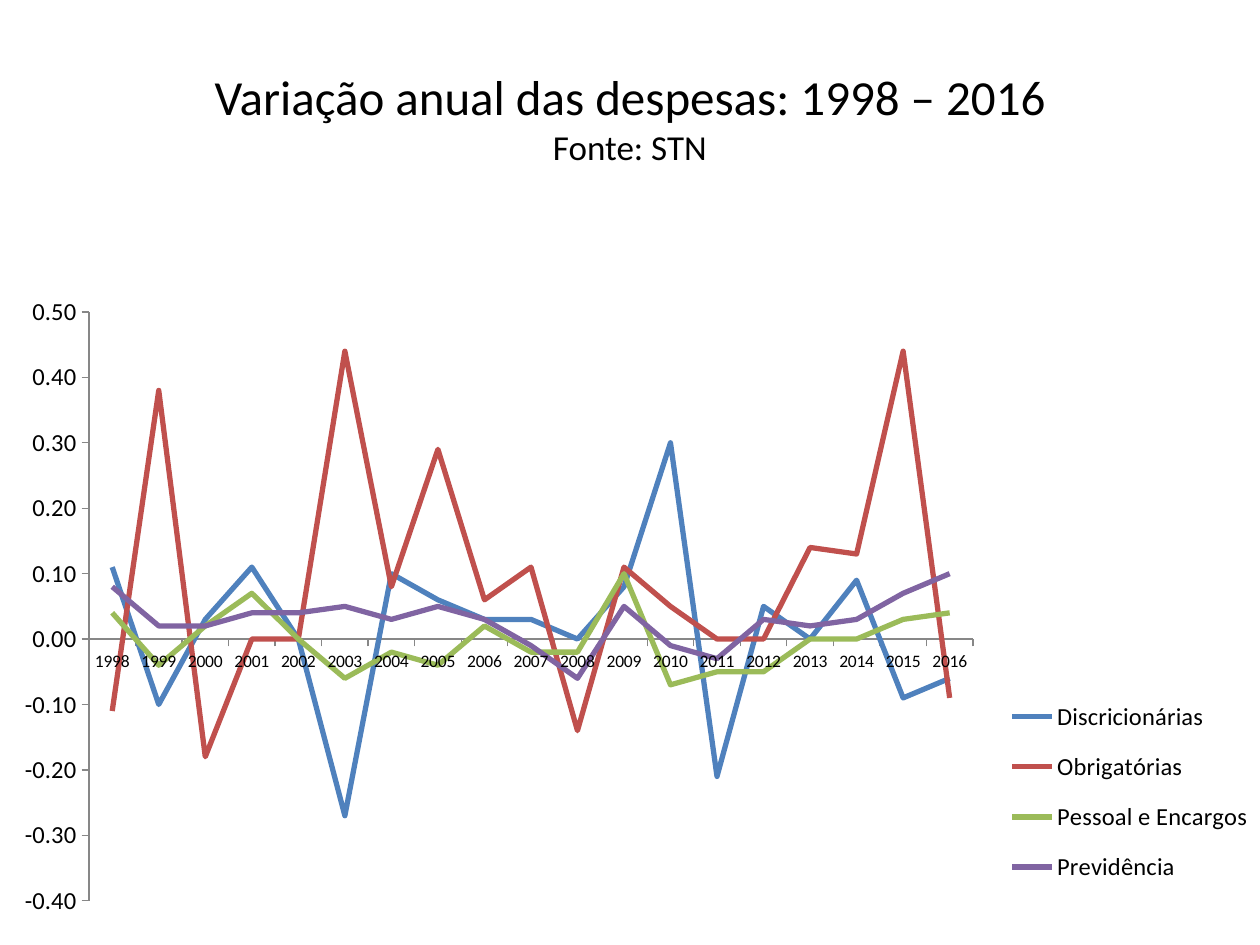
from lxml import etree
from pptx import Presentation
from pptx.chart.data import CategoryChartData
from pptx.dml.color import RGBColor
from pptx.enum.chart import XL_CHART_TYPE as ChartType
from pptx.enum.chart import XL_LEGEND_POSITION as LegendPosition
from pptx.enum.chart import XL_MARKER_STYLE as Marker
from pptx.enum.chart import XL_TICK_MARK as Tick
from pptx.enum.text import MSO_ANCHOR as Anchor
from pptx.enum.text import PP_ALIGN as Align
from pptx.oxml.ns import qn
from pptx.util import Emu, Pt

COLORS = {
    "text": "000000",
    "axis": "878787",
    "Discricionárias": "4F81BD",
    "Obrigatórias": "C0504D",
    "Pessoal e Encargos": "9BBB59",
    "Previdência": "8064A2",
}
YEARS = [str(year) for year in range(1998, 2017)]
EXPENSES = {
    "Discricionárias": [0.11, -0.1, 0.03, 0.11, 0, -0.27, 0.1, 0.06, 0.03, 0.03,
                        0, 0.08, 0.3, -0.21, 0.05, 0, 0.09, -0.09, -0.06],
    "Obrigatórias": [-0.11, 0.38, -0.18, 0, 0, 0.44, 0.08, 0.29, 0.06, 0.11,
                     -0.14, 0.11, 0.05, 0, 0, 0.14, 0.13, 0.44, -0.09],
    "Pessoal e Encargos": [0.04, -0.04, 0.02, 0.07, 0, -0.06, -0.02, -0.04, 0.02, -0.02,
                           -0.02, 0.1, -0.07, -0.05, -0.05, 0, 0, 0.03, 0.04],
    "Previdência": [0.08, 0.02, 0.02, 0.04, 0.04, 0.05, 0.03, 0.05, 0.03, -0.01,
                    -0.06, 0.05, -0.01, -0.03, 0.03, 0.02, 0.03, 0.07, 0.1],
}


def px(length):
    return Emu(round(length * 914400 / 126))


class SlideBuilder:
    font_name = "Calibri"

    def __init__(self, slide):
        self.slide = slide

    def style_font(self, font, size):
        font.name = self.font_name
        font.size = Pt(size)
        font.bold = False
        font.color.rgb = RGBColor.from_string(COLORS["text"])

    def heading(self, box, lines, sizes):
        frame = self.slide.shapes.add_textbox(*map(px, box)).text_frame
        frame.word_wrap = True
        frame.vertical_anchor = Anchor.MIDDLE
        paragraph = frame.paragraphs[0]
        paragraph.text = "\v".join(lines)
        paragraph.alignment = Align.CENTER
        for run, size in zip(paragraph.runs, sizes):
            self.style_font(run.font, size)

    def place(self, part, index, area, box, inner=False):
        for layout in part.findall(qn("c:layout")):
            part.remove(layout)
        layout = etree.Element(qn("c:layout"))
        manual = etree.SubElement(layout, qn("c:manualLayout"))
        left, top, width, height = area
        settings = {
            "xMode": "edge",
            "yMode": "edge",
            "x": (box[0] - left) / width,
            "y": (box[1] - top) / height,
            "w": box[2] / width,
            "h": box[3] / height,
        }
        if inner:
            settings = {"layoutTarget": "inner", **settings}
        for tag, value in settings.items():
            etree.SubElement(manual, qn(f"c:{tag}")).set("val", str(value))
        part.insert(index, layout)

    def style_axis(self, axis, size):
        axis.has_major_gridlines = False
        axis.major_tick_mark = Tick.OUTSIDE
        axis.minor_tick_mark = Tick.NONE
        axis.format.line.color.rgb = RGBColor.from_string(COLORS["axis"])
        axis.format.line.width = Pt(0.75)
        self.style_font(axis.tick_labels.font, size)

    def line_chart(self, box, categories, series, plot_box, legend_box):
        data = CategoryChartData(number_format="0.00")
        data.categories = categories
        for name, values in series.items():
            data.add_series(name, values)
        chart = self.slide.shapes.add_chart(ChartType.LINE, *map(px, box), data).chart
        chart.has_title = False
        self.style_font(chart.font, 10)

        self.style_axis(chart.category_axis, 10)
        value_axis = chart.value_axis
        self.style_axis(value_axis, 14)
        value_axis.minimum_scale = -0.4
        value_axis.maximum_scale = 0.5
        value_axis.major_unit = 0.1
        value_axis.tick_labels.number_format = "0.00"
        value_axis.tick_labels.number_format_is_linked = False

        plot = chart.plots[0]
        plot.vary_by_categories = False
        for expense in plot.series:
            expense.smooth = False
            expense.marker.style = Marker.NONE
            expense.format.line.width = Pt(3)
            expense.format.line.color.rgb = RGBColor.from_string(COLORS[expense.name])

        chart.has_legend = True
        chart.legend.position = LegendPosition.RIGHT
        chart.legend.include_in_layout = False
        self.style_font(chart.legend.font, 14)

        root = chart.element if hasattr(chart, "element") else chart._chartSpace
        self.place(root.find(".//" + qn("c:plotArea")), 0, box, plot_box, inner=True)
        self.place(root.find(".//" + qn("c:legend")), 1, box, legend_box)


def main():
    deck = Presentation()
    deck.slide_width, deck.slide_height = px(1260), px(945)
    builder = SlideBuilder(deck.slides.add_slide(deck.slide_layouts[6]))
    builder.heading(
        (63, 38, 1134, 158),
        ["Variação anual das despesas: 1998 – 2016", "Fonte: STN"],
        [28, 20],
    )
    builder.line_chart(
        (0, 284, 1260, 645), YEARS, EXPENSES,
        plot_box=(89, 312, 884, 589),
        legend_box=(1010, 682, 246, 220),
    )
    deck.save("out.pptx")


if __name__ == "__main__":
    main()
